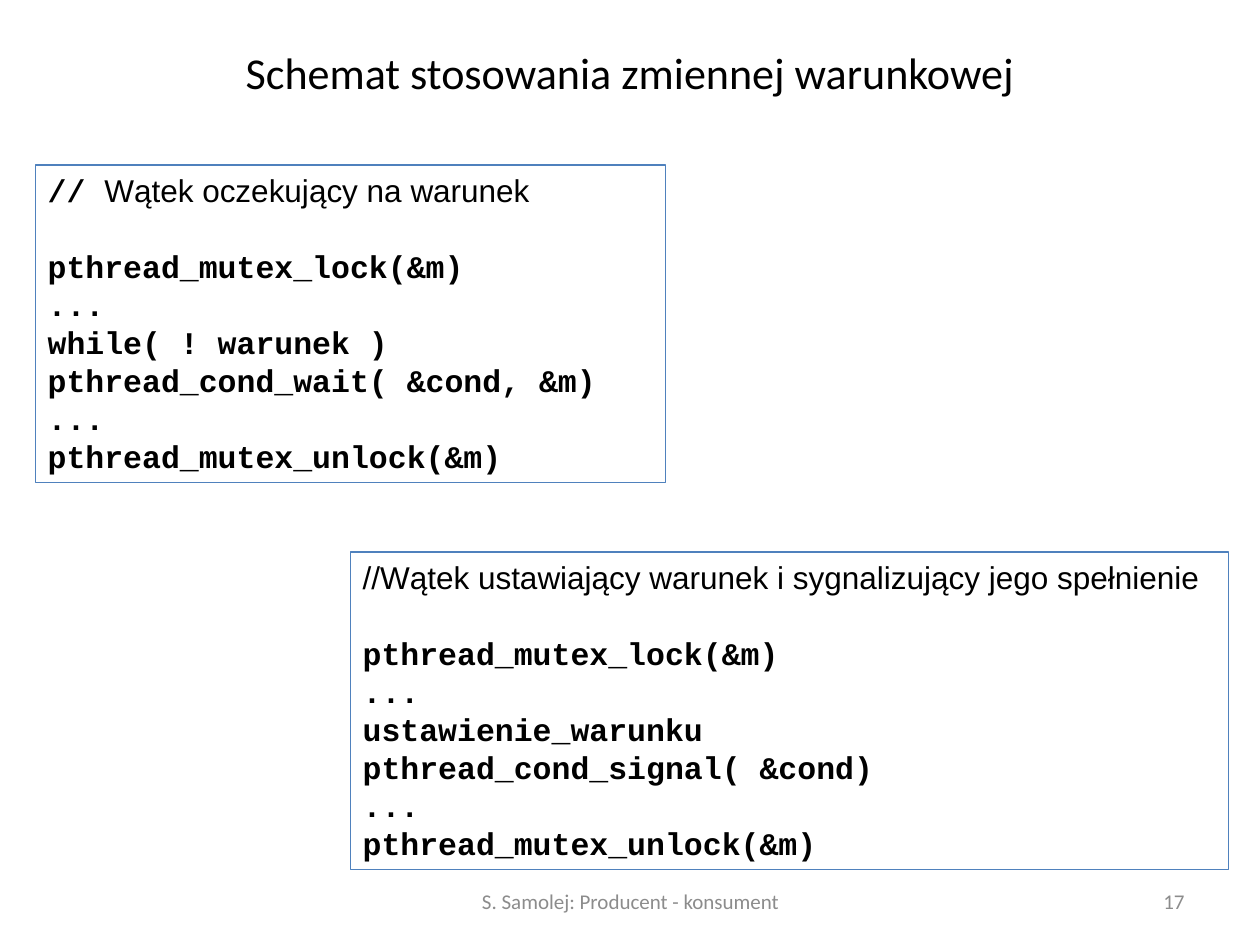
from typing import NamedTuple

from pptx import Presentation
from pptx.dml.color import RGBColor
from pptx.enum.shapes import MSO_SHAPE
from pptx.enum.text import MSO_ANCHOR, PP_ALIGN
from pptx.util import Inches, Pt

BLACK = RGBColor(0x00, 0x00, 0x00)
GRAY = RGBColor(0x8C, 0x8C, 0x8C)
BLUE = RGBColor(0x4F, 0x81, 0xBD)

CODE_SIZE = Pt(18)
CODE_PITCH = Pt(21.7)


class Label(NamedTuple):
    text: str
    left: float
    top: float
    width: float
    height: float
    size: float
    color: RGBColor
    align: PP_ALIGN


class Listing(NamedTuple):
    left: float
    top: float
    width: float
    marker: str
    comment: str
    code: list[str]


LISTING_HEIGHT = 2.52

LABELS = [
    Label("Schemat stosowania zmiennej warunkowej",
          0.5, 0.3, 9, 0.54, 25.2, BLACK, PP_ALIGN.CENTER),
    Label("S. Samolej: Producent - konsument",
          3.42, 6.95, 3.17, 0.4, 12, GRAY, PP_ALIGN.CENTER),
    Label("17", 7.17, 6.95, 2.33, 0.4, 12, GRAY, PP_ALIGN.RIGHT),
]


def guarded_by_mutex(*body: str) -> list[str]:
    return ["pthread_mutex_lock(&m)", "...", *body, "...", "pthread_mutex_unlock(&m)"]


LISTINGS = [
    Listing(0.28, 1.31, 5, "// ", "Wątek oczekujący na warunek",
            guarded_by_mutex("while( ! warunek )", "pthread_cond_wait( &cond, &m)")),
    Listing(2.78, 4.38, 6.97, "",
            "//Wątek ustawiający warunek i sygnalizujący jego spełnienie",
            guarded_by_mutex("ustawienie_warunku", "pthread_cond_signal( &cond)")),
]


def style(font, name: str, size: Pt, color: RGBColor, bold: bool = False) -> None:
    font.name = name
    font.size = size
    font.color.rgb = color
    font.bold = bold


def add_label(slide, label: Label) -> None:
    box = slide.shapes.add_textbox(Inches(label.left), Inches(label.top),
                                   Inches(label.width), Inches(label.height))
    frame = box.text_frame
    frame.word_wrap = True
    frame.vertical_anchor = MSO_ANCHOR.MIDDLE
    paragraph = frame.paragraphs[0]
    paragraph.text = label.text
    paragraph.alignment = label.align
    style(paragraph.font, "Calibri", Pt(label.size), label.color)


def add_listing(slide, listing: Listing) -> None:
    """Draw a framed listing: a comment line, a one-line gap, then the code."""
    panel = slide.shapes.add_shape(MSO_SHAPE.RECTANGLE,
                                   Inches(listing.left), Inches(listing.top),
                                   Inches(listing.width), Inches(LISTING_HEIGHT))
    panel.shadow.inherit = False
    panel.fill.background()
    panel.line.color.rgb = BLUE
    panel.line.width = Pt(0.75)
    frame = panel.text_frame
    frame.word_wrap = True
    frame.vertical_anchor = MSO_ANCHOR.TOP

    heading = frame.paragraphs[0]
    if listing.marker:
        marker = heading.add_run()
        marker.text = listing.marker
        style(marker.font, "Courier New", CODE_SIZE, BLACK, bold=True)
    comment = heading.add_run()
    comment.text = listing.comment
    style(comment.font, "Arial", CODE_SIZE, BLACK)

    for index, statement in enumerate(listing.code):
        paragraph = frame.add_paragraph()
        paragraph.text = statement
        style(paragraph.font, "Courier New", CODE_SIZE, BLACK, bold=True)
        if index == 0:
            paragraph.space_before = CODE_PITCH

    for paragraph in frame.paragraphs:
        paragraph.alignment = PP_ALIGN.LEFT
        paragraph.line_spacing = CODE_PITCH


def main() -> None:
    presentation = Presentation()
    presentation.slide_width = Inches(10)
    presentation.slide_height = Inches(7.5)
    slide = presentation.slides.add_slide(presentation.slide_layouts[6])
    for label in LABELS:
        add_label(slide, label)
    for listing in LISTINGS:
        add_listing(slide, listing)
    presentation.save("out.pptx")


if __name__ == "__main__":
    main()
